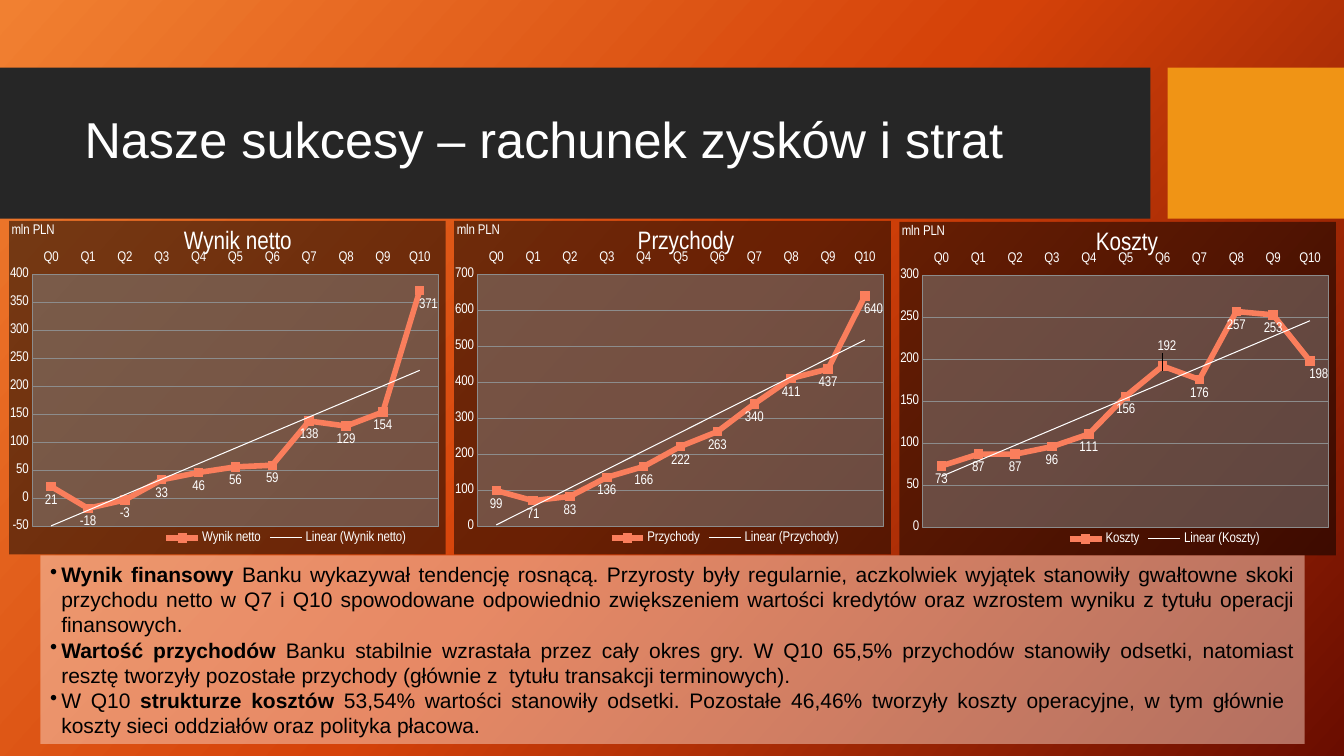
"""Build the profit and loss slide with three trend charts."""
from typing import Any, NamedTuple
import pptx
import pptx.chart.data
import pptx.dml.color
import pptx.enum.chart
import pptx.enum.shapes
import pptx.enum.text
import pptx.oxml
import pptx.oxml.ns
import pptx.util

Inches = pptx.util.Inches
Pt = pptx.util.Pt
qn = pptx.oxml.ns.qn
tint = pptx.dml.color.RGBColor.from_string
NS = pptx.oxml.ns.nsdecls("a", "c")

class Theme(NamedTuple):
    white: str = "FFFFFF"
    black: str = "000000"
    dark: str = "262626"
    amber: str = "F09415"
    coral: str = "FA7E5C"
    gray: str = "808080"
    grid: str = "8C8C8C"
    peach: str = "F9D1C1"
    back: tuple = ((0, "F18031"), (50, "D54209"), (100, "6A0D00"))
    angle: int = 42
    sans: str = "Arial"
    narrow: str = "Arial Narrow"
    head: int = 36
    body: int = 15
    title: int = 18
    small: int = 10

class Panel(NamedTuple):
    name: str
    vals: tuple
    low: int
    high: int
    step: int
    top: float
    title: float
    legend: float
    shifts: dict

LOOK = Theme()
LAST = (0.02, 0)
PANELS = (
    Panel("Wynik netto", (21, -18, -3, 33, 46, 56, 59, 138, 129, 154, 371),
          -50, 400, 50, 2.19, 0.39, 0.35, {10: LAST}),
    Panel("Przychody", (99, 71, 83, 136, 166, 222, 263, 340, 411, 437, 640),
          0, 700, 100, 2.19, 0.41, 0.35, {10: LAST}),
    Panel("Koszty", (73, 87, 87, 96, 111, 156, 192, 176, 257, 253, 198),
          0, 300, 50, 2.2, 0.44, 0.38, {6: (0.01, -0.1), 10: LAST}),
)
NOTES = (
    (("Wynik finansowy ", True),
     ("Banku wykazywał tendencję rosnącą. Przyrosty były regularnie, aczkolwiek wyjątek "
      "stanowiły gwałtowne skoki przychodu netto w Q7 i Q10 spowodowane odpowiednio "
      "zwiększeniem wartości kredytów oraz wzrostem wyniku z tytułu operacji finansowych. ", False)),
    (("Wartość przychodów ", True),
     ("Banku stabilnie wzrastała przez cały okres gry. W Q10 65,5% przychodów stanowiły odsetki, "
      "natomiast resztę tworzyły pozostałe przychody (głównie z  tytułu transakcji terminowych).", False)),
    (("W Q10 ", False), ("strukturze kosztów ", True),
     ("53,54% wartości stanowiły odsetki. Pozostałe 46,46% tworzyły koszty operacyjne, w tym "
      "głównie  koszty sieci oddziałów oraz polityka płacowa.", False)),
)

def xml(text: str) -> Any:
    tag, rest = text.split(">", 1)
    end = "/" if tag.endswith("/") else ""
    return pptx.oxml.parse_xml(f"{tag.rstrip('/')} {NS}{end}>{rest}")

def style(font: Any, face: str, size: int, color: str, bold: bool = False) -> None:
    font.name, font.size, font.bold = face, Pt(size), bold
    font.color.rgb = tint(color)

def stroke(line: Any, color: str, width: float) -> None:
    line.color.rgb = tint(color)
    line.width = Pt(width)

def solid(color: str, alpha: int = 100) -> str:
    return (f'<a:solidFill><a:srgbClr val="{color}"><a:alpha val="{alpha * 1000}"/>'
            '</a:srgbClr></a:solidFill>')

def glass(color: str, edge: str) -> Any:
    return xml(f'<c:spPr>{solid(color, 50)}<a:ln w="9525">{edge}</a:ln></c:spPr>')

def place(node: Any, index: int, modes: str = "xy", **spot: float) -> None:
    for old in node.findall(qn("c:layout")):
        node.remove(old)
    kind = '<c:layoutTarget val="inner"/>' if "w" in spot else ""
    edge = "".join(f'<c:{m}Mode val="edge"/>' for m in modes)
    vals = "".join(f'<c:{k} val="{v}"/>' for k, v in spot.items())
    node.insert(index, xml(f"<c:layout><c:manualLayout>{kind}{edge}{vals}</c:manualLayout></c:layout>"))

def block(slide: Any, box: tuple, color: str) -> Any:
    shape = slide.shapes.add_shape(pptx.enum.shapes.MSO_SHAPE.RECTANGLE, *map(Inches, box))
    shape.shadow.inherit = False
    shape.fill.solid()
    shape.fill.fore_color.rgb = tint(color)
    shape.line.fill.background()
    return shape

def label(title: Any, text: str, size: int, x: float, y: float) -> None:
    title.text_frame.text = text
    style(title.text_frame.paragraphs[0].runs[0].font, LOOK.narrow, size, LOOK.white)
    title.element.find(".//" + qn("a:bodyPr")).set("rot", "0")
    place(title.element, 1, x=x, y=y)

def trace(line: Any, shifts: dict) -> None:
    enum = pptx.enum.chart
    line.smooth = False
    stroke(line.format.line, LOOK.coral, 4)
    line.marker.style, line.marker.size = enum.XL_MARKER_STYLE.SQUARE, 6
    line.marker.format.fill.solid()
    line.marker.format.fill.fore_color.rgb = tint(LOOK.coral)
    line.marker.format.line.fill.background()
    line.data_labels.show_value = True
    line.data_labels.position = enum.XL_LABEL_POSITION.BELOW
    for n in shifts:
        line.points[n].data_label.position = enum.XL_LABEL_POSITION.BELOW

def graph(slide: Any, panel: Panel, left: float) -> None:
    enum = pptx.enum.chart
    data = pptx.chart.data.CategoryChartData()
    data.categories = [f"Q{n}" for n in range(len(panel.vals))]
    data.add_series(panel.name, panel.vals)
    box = map(Inches, (left, panel.top, 4.33, 3.31))
    chart = slide.shapes.add_chart(enum.XL_CHART_TYPE.LINE_MARKERS, *box, data).chart
    root = chart.element
    style(chart.font, LOOK.narrow, LOOK.small, LOOK.white)
    chart.has_title = True
    label(chart.chart_title, panel.name, LOOK.title, panel.title, 0.01)
    chart.has_legend = True
    chart.legend.position = enum.XL_LEGEND_POSITION.TOP
    chart.legend.include_in_layout = False
    legend = root.find(".//" + qn("c:legend"))
    legend.insert(1, xml('<c:legendEntry><c:idx val="1"/><c:delete val="1"/></c:legendEntry>'))
    place(legend, 2, x=panel.legend, y=0.92)
    cat, val = chart.category_axis, chart.value_axis
    for axis in (cat, val):
        axis.major_tick_mark = axis.minor_tick_mark = enum.XL_TICK_MARK.NONE
        stroke(axis.format.line, LOOK.grid, 0.75)
    cat.tick_label_position = enum.XL_TICK_LABEL_POSITION.HIGH
    val.minimum_scale, val.maximum_scale, val.major_unit = panel.low, panel.high, panel.step
    stroke(val.major_gridlines.format.line, LOOK.grid, 0.75)
    label(val.axis_title, "mln PLN", LOOK.small, 0, 0)
    chart.plots[0].vary_by_categories = False
    trace(chart.plots[0].series[0], panel.shifts)
    for node, (x, y) in zip(root.iter(qn("c:dLbl")), panel.shifts.values()):
        place(node, 1, "", x=x, y=y)
    root.find(".//" + qn("c:ser")).find(qn("c:cat")).addprevious(xml(
        f'<c:trendline><c:spPr><a:ln w="9525">{solid(LOOK.white)}</a:ln></c:spPr>'
        '<c:trendlineType val="linear"/><c:dispRSqr val="0"/><c:dispEq val="0"/></c:trendline>'))
    area = root.find(".//" + qn("c:plotArea"))
    place(area, 0, x=0.054, y=0.161, w=0.929, h=0.755)
    area.append(glass(LOOK.gray, solid(LOOK.grid)))
    root.find(qn("c:chart")).addnext(glass(LOOK.black, "<a:noFill/>"))

def notes(slide: Any) -> None:
    shape = block(slide, (0.4, 5.51, 12.54, 1.87), LOOK.peach)
    shape.element.spPr.find(".//" + qn("a:srgbClr")).append(xml('<a:alpha val="50000"/>'))
    frame = shape.text_frame
    frame.word_wrap = True
    for n, parts in enumerate(NOTES):
        para = frame.add_paragraph() if n else frame.paragraphs[0]
        prop = para._p.get_or_add_pPr()
        prop.set("marL", str(Inches(0.11)))
        prop.set("indent", str(Inches(-0.11)))
        prop.append(xml('<a:buChar char="•"/>'))
        para.alignment = pptx.enum.text.PP_ALIGN.JUSTIFY
        for text, bold in parts:
            run = para.add_run()
            run.text = text
            style(run.font, LOOK.sans, LOOK.body, LOOK.black, bold)

def main() -> None:
    deck = pptx.Presentation()
    deck.slide_width, deck.slide_height = Inches(13.33), Inches(7.5)
    slide = deck.slides.add_slide(deck.slide_layouts[6])
    slide.background.fill.gradient()
    fill = slide.element.find(".//" + qn("a:gradFill"))
    stops = "".join(f'<a:gs pos="{p * 1000}"><a:srgbClr val="{c}"/></a:gs>' for p, c in LOOK.back)
    fill.replace(fill.find(qn("a:gsLst")), xml(f"<a:gsLst>{stops}</a:gsLst>"))
    fill.find(qn("a:lin")).set("ang", str(LOOK.angle * 60000))
    block(slide, (0, 0.67, 11.41, 1.5), LOOK.dark)
    block(slide, (11.58, 0.67, 1.75, 1.5), LOOK.amber)
    frame = slide.shapes.add_textbox(*map(Inches, (0.74, 0.82, 10.51, 1.18))).text_frame
    frame.word_wrap = True
    frame.vertical_anchor = pptx.enum.text.MSO_ANCHOR.MIDDLE
    frame.text = "Nasze sukcesy – rachunek zysków i strat"
    frame.paragraphs[0].line_spacing = 0.9
    style(frame.paragraphs[0].runs[0].font, LOOK.sans, LOOK.head, LOOK.white)
    for n, panel in enumerate(PANELS):
        graph(slide, panel, 0.09 + 4.415 * n)
    notes(slide)
    deck.save("out.pptx")

if __name__ == "__main__":
    main()
